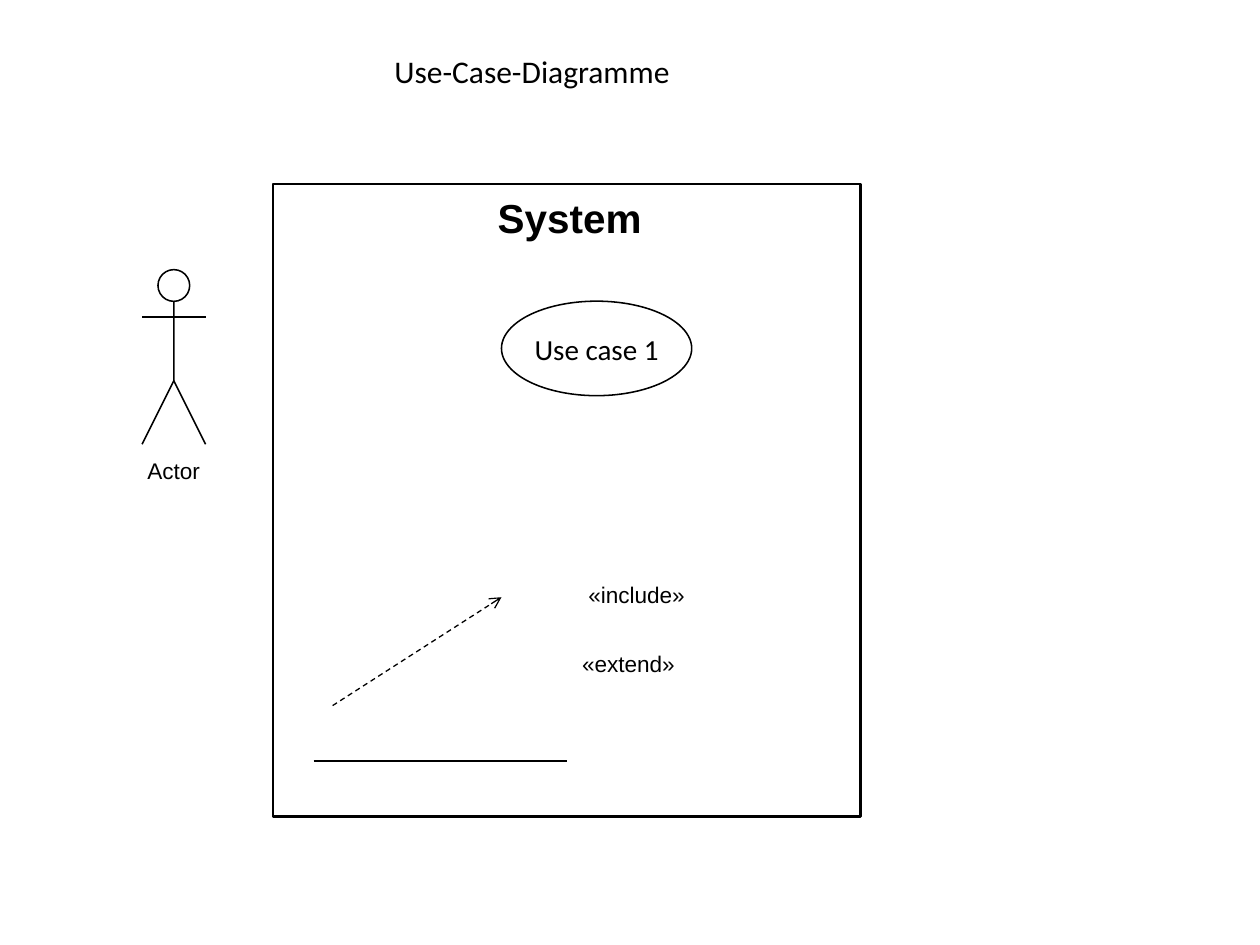
from lxml.etree import SubElement
from pptx import Presentation
from pptx.dml.color import RGBColor
from pptx.enum.dml import MSO_LINE
from pptx.enum.shapes import MSO_CONNECTOR, MSO_SHAPE
from pptx.enum.text import MSO_ANCHOR, MSO_AUTO_SIZE, PP_ALIGN
from pptx.oxml.ns import qn
from pptx.util import Inches, Pt

BLACK = "000000"
TITLE = ("Use-Case-Diagramme", (3.03, 0.36, 4.72, 0.4))
SYSTEM_BOX = (2.17, 1.46, 4.66, 5.02)
USE_CASE = ("Use case 1", (3.98, 2.39, 1.51, 0.75))
LABELS = [
    ("«include»", (4.67, 4.61, 0.77, 0.22), 12.9, False),
    ("«extend»", (4.62, 5.16, 0.74, 0.22), 12.9, False),
    ("Actor", (1.17, 3.63, 0.42, 0.22), 12.9, False),
    ("System", (3.95, 1.53, 1.15, 0.39), 23.1, True),
]
ASSOCIATION = ((2.49, 6.04), (4.5, 6.04))
DEPENDENCY = ((2.64, 5.6), (3.98, 4.74))
ACTOR_CENTER, ACTOR_TOP, ACTOR_UNIT = 1.38, 2.14, 0.126
ACTOR_STROKES = [
    [(-2, 3), (2, 3)],
    [(0, 2), (0, 7), (-2, 11)],
    [(0, 7), (2, 11)],
]


def color(value):
    return RGBColor.from_string(value)


def inches(values):
    return [Inches(value) for value in values]


def style_line(shape, width):
    shape.line.color.rgb = color(BLACK)
    shape.line.width = Pt(width)


def style_text(text_frame, text, font_name, size, bold=False, align=PP_ALIGN.LEFT):
    text_frame.text = text
    paragraph = text_frame.paragraphs[0]
    paragraph.alignment = align
    font = paragraph.runs[0].font
    font.name, font.size, font.bold = font_name, Pt(size), bold
    font.color.rgb = color(BLACK)


def outline(shape, width):
    shape.shadow.inherit = False
    shape.fill.background()
    style_line(shape, width)
    return shape


def add_outline(slide, kind, box, width):
    return outline(slide.shapes.add_shape(kind, *inches(box)), width)


def add_line(slide, ends, width):
    start, end = ends
    connector = slide.shapes.add_connector(MSO_CONNECTOR.STRAIGHT, *inches(start + end))
    style_line(connector, width)
    SubElement(connector._element.spPr, qn("a:effectLst"))
    return connector


def add_label(slide, text, box, size, bold):
    text_frame = slide.shapes.add_textbox(*inches(box)).text_frame
    text_frame.margin_left = text_frame.margin_right = 0
    text_frame.margin_top = text_frame.margin_bottom = 0
    text_frame.word_wrap = False
    text_frame.auto_size = MSO_AUTO_SIZE.SHAPE_TO_FIT_TEXT
    style_text(text_frame, text, "Arial", size, bold)


def add_actor(slide):
    def point(column, row):
        return inches((ACTOR_CENTER + column * ACTOR_UNIT, ACTOR_TOP + row * ACTOR_UNIT))

    builder = slide.shapes.build_freeform(*point(*ACTOR_STROKES[0][0]))
    for index, (start, *others) in enumerate(ACTOR_STROKES):
        if index:
            builder.move_to(*point(*start))
        builder.add_line_segments([point(*other) for other in others], close=False)
    outline(builder.convert_to_shape(), 0.88)
    head = (ACTOR_CENTER - ACTOR_UNIT, ACTOR_TOP, 2 * ACTOR_UNIT, 2 * ACTOR_UNIT)
    add_outline(slide, MSO_SHAPE.OVAL, head, 0.88)


def add_title(slide):
    text, box = TITLE
    title = slide.shapes.title
    title.left, title.top, title.width, title.height = inches(box)
    text_frame = title.text_frame
    text_frame.word_wrap = True
    text_frame.auto_size = MSO_AUTO_SIZE.SHAPE_TO_FIT_TEXT
    text_frame.vertical_anchor = MSO_ANCHOR.TOP
    style_text(text_frame, text, "Calibri", 18)


def main():
    """Build the use-case diagram slide."""
    presentation = Presentation()
    presentation.slide_width, presentation.slide_height = inches((10, 7.5))
    slide = presentation.slides.add_slide(presentation.slide_layouts[5])
    add_title(slide)
    add_actor(slide)
    add_outline(slide, MSO_SHAPE.RECTANGLE, SYSTEM_BOX, 1.25)
    text, box = USE_CASE
    use_case = add_outline(slide, MSO_SHAPE.OVAL, box, 0.88)
    use_case.text_frame.word_wrap = False
    use_case.text_frame.vertical_anchor = MSO_ANCHOR.MIDDLE
    style_text(use_case.text_frame, text, "Calibri", 16.6, align=PP_ALIGN.CENTER)
    for label in LABELS:
        add_label(slide, *label)
    add_line(slide, ASSOCIATION, 0.88)
    dependency = add_line(slide, DEPENDENCY, 0.75)
    dependency.line.dash_style = MSO_LINE.DASH
    SubElement(dependency.line._get_or_add_ln(), qn("a:tailEnd"), type="arrow")
    presentation.save("out.pptx")


if __name__ == "__main__":
    main()
